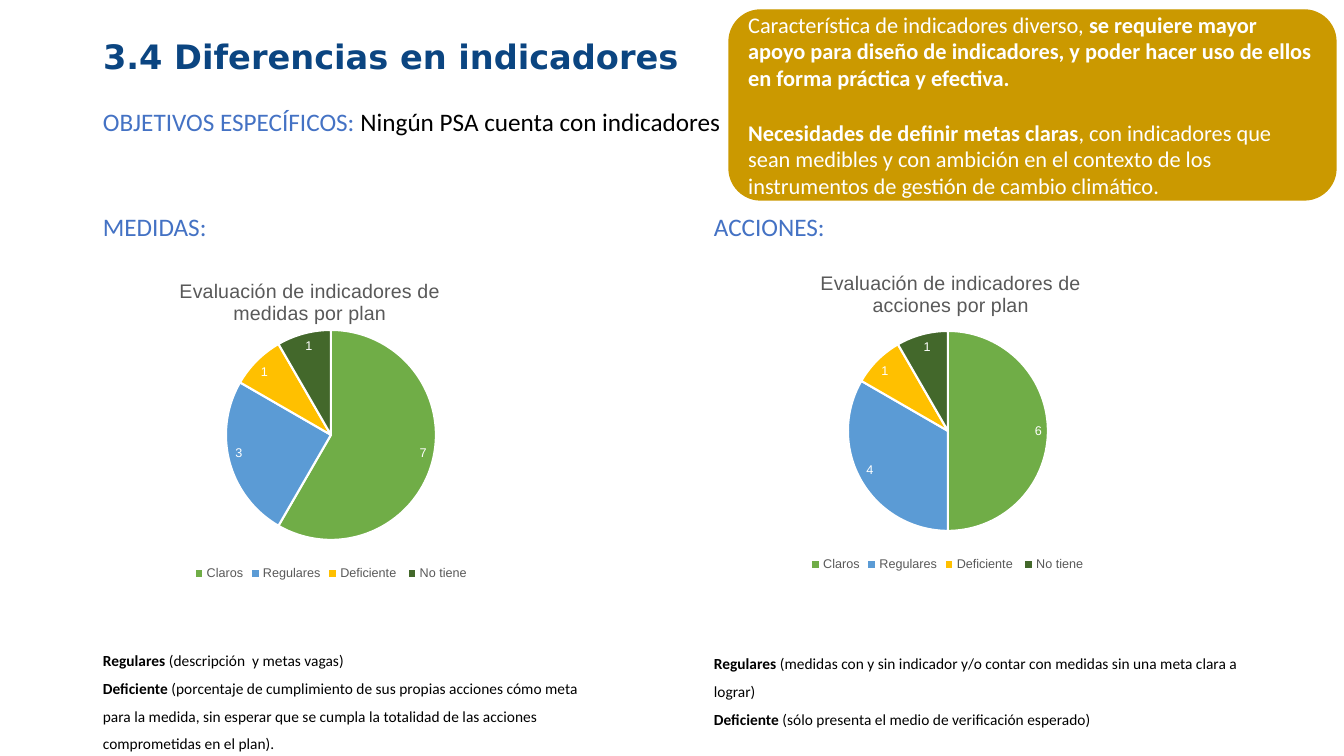
from dataclasses import dataclass

from lxml import etree
from pptx import Presentation
from pptx.chart.data import CategoryChartData
from pptx.dml.color import RGBColor
from pptx.enum.chart import XL_CHART_TYPE, XL_LABEL_POSITION, XL_LEGEND_POSITION
from pptx.enum.shapes import MSO_SHAPE
from pptx.enum.text import MSO_ANCHOR, MSO_AUTO_SIZE, PP_ALIGN
from pptx.oxml.ns import qn
from pptx.util import Pt

PIE = XL_CHART_TYPE.PIE
INSIDE_END = XL_LABEL_POSITION.INSIDE_END
BOTTOM = XL_LEGEND_POSITION.BOTTOM
ROUNDED = MSO_SHAPE.ROUNDED_RECTANGLE
TOP, MIDDLE = MSO_ANCHOR.TOP, MSO_ANCHOR.MIDDLE
NO_AUTOFIT = MSO_AUTO_SIZE.NONE
LEFT = PP_ALIGN.LEFT

EMU_PER_PX = 914400 / 100.8
SLIDE_W, SLIDE_H = 1344, 756


@dataclass(frozen=True)
class Theme:
    title_font: str = "DejaVu Sans"
    body_font: str = "Calibri"
    chart_font: str = "Arial"
    navy: str = "0B4581"
    blue: str = "4472C4"
    gold: str = "CB9900"
    black: str = "000000"
    white: str = "FFFFFF"
    gray: str = "595959"
    slices: tuple = ("70AD47", "5B9BD5", "FFC000", "43682B")
    title_size: int = 24
    heading_size: int = 18
    callout_size: int = 16
    chart_title_size: int = 14
    note_size: int = 11
    label_size: int = 9


THEME = Theme()
CATEGORIES = ("Claros", "Regulares", "Deficiente ", "No tiene")


def px(*lengths):
    return [round(length * EMU_PER_PX) for length in lengths]


def style(font, size, color, name=THEME.body_font, bold=False):
    font.size = Pt(size)
    font.name = name
    font.bold = bold
    font.color.rgb = RGBColor.from_string(color)


def write(frame, paragraphs, size, name=THEME.body_font, spacing=1.0, gap=0):
    """Fill a frame with paragraphs made of (text, color, bold) pieces."""
    frame.word_wrap = True
    frame.auto_size = NO_AUTOFIT
    for index, pieces in enumerate(paragraphs):
        paragraph = frame.paragraphs[0] if index == 0 else frame.add_paragraph()
        paragraph.alignment = LEFT
        paragraph.line_spacing = spacing
        paragraph.space_before = Pt(gap if index else 0)
        for text, color, bold in pieces:
            run = paragraph.add_run()
            run.text = text
            style(run.font, size, color, name, bold)


def add_text(slide, box, paragraphs, size, spacing=1.0):
    frame = slide.shapes.add_textbox(*px(*box)).text_frame
    write(frame, paragraphs, size, spacing=spacing)


def add_title(slide, box):
    title = slide.shapes.title
    title.left, title.top, title.width, title.height = px(*box)
    title.text_frame.vertical_anchor = TOP
    write(title.text_frame, [[("3.4 Diferencias en indicadores", THEME.navy, True)]],
          THEME.title_size, THEME.title_font, spacing=0.9)


def add_objectives(slide, box):
    add_text(slide, box, [[("OBJETIVOS ESPECÍFICOS: ", THEME.blue, False),
                           ("Ningún PSA cuenta con indicadores", THEME.black, False)]],
             THEME.heading_size)


def add_callout(slide, box):
    callout = slide.shapes.add_shape(ROUNDED, *px(*box))
    callout.shadow.inherit = False
    callout.fill.solid()
    callout.fill.fore_color.rgb = RGBColor.from_string(THEME.gold)
    callout.line.color.rgb = RGBColor.from_string(THEME.gold)
    callout.line.width = Pt(1)
    callout.text_frame.vertical_anchor = MIDDLE
    write(callout.text_frame, [
        [("Característica de indicadores diverso, ", THEME.white, False),
         ("se requiere mayor apoyo para diseño de indicadores, y poder hacer uso "
          "de ellos en forma práctica y efectiva.", THEME.white, True)],
        [("Necesidades de definir metas claras", THEME.white, True),
         (", con indicadores que sean medibles y con ambición en el contexto de los "
          "instrumentos de gestión de cambio climático.", THEME.white, False)],
    ], THEME.callout_size, gap=19.5)


def place(element, index, inner=False, **fractions):
    """Give a chart part a manual layout in fractions of the chart."""
    for old in element.findall(qn("c:layout")):
        element.remove(old)
    layout = etree.Element(qn("c:layout"))
    manual = etree.SubElement(layout, qn("c:manualLayout"))
    if inner:
        etree.SubElement(manual, qn("c:layoutTarget")).set("val", "inner")
    for axis in "xy":
        etree.SubElement(manual, qn(f"c:{axis}Mode")).set("val", "edge")
    for key, value in fractions.items():
        etree.SubElement(manual, qn(f"c:{key}")).set("val", f"{value:.4f}")
    element.insert(index, layout)


def add_pie(slide, box, heading, values, heading_at, pie_at, diameter):
    """Place a pie; heading_at and pie_at are offsets from the chart's corner."""
    width, height = box[2:]
    data = CategoryChartData()
    data.categories = CATEGORIES
    data.add_series("Series 1", values)
    chart = slide.shapes.add_chart(PIE, *px(*box), data).chart
    style(chart.font, THEME.label_size, THEME.gray, THEME.chart_font)

    chart.has_title = True
    title = chart.chart_title
    title.text_frame.text = heading
    style(title.text_frame.paragraphs[0].runs[0].font,
          THEME.chart_title_size, THEME.gray, THEME.chart_font)
    place(title._element, 1, x=heading_at[0] / width, y=heading_at[1] / height)

    chart.has_legend = True
    chart.legend.position = BOTTOM
    chart.legend.include_in_layout = False
    style(chart.legend.font, THEME.label_size, THEME.gray, THEME.chart_font)

    plot = chart.plots[0]
    plot.vary_by_categories = True
    place(plot._element.getparent(), 0, inner=True,
          x=pie_at[0] / width, y=pie_at[1] / height,
          w=diameter / width, h=diameter / height)
    for index, color in enumerate(THEME.slices):
        wedge = plot.series[0].points[index].format
        wedge.fill.solid()
        wedge.fill.fore_color.rgb = RGBColor.from_string(color)
        wedge.line.color.rgb = RGBColor.from_string(THEME.white)
        wedge.line.width = Pt(1.5)
    plot.has_data_labels = True
    labels = plot.data_labels
    labels.show_value = True
    labels.show_percentage = False
    labels.position = INSIDE_END
    style(labels.font, THEME.label_size, THEME.white, THEME.chart_font)


def add_column(slide, box, heading, notes_top, notes, pie):
    left, top, width, height = box
    add_text(slide, (left, top, width, 56), [[(heading, THEME.blue, False)]],
             THEME.heading_size, spacing=1.5)
    add_pie(slide, **pie)
    definitions = [[(term, THEME.black, True), (meaning, THEME.black, False)]
                   for term, meaning in notes]
    add_text(slide, (left, notes_top, width, top + height - notes_top),
             definitions, THEME.note_size, spacing=1.5)


def main():
    deck = Presentation()
    deck.slide_width, deck.slide_height = px(SLIDE_W, SLIDE_H)
    slide = deck.slides.add_slide(deck.slide_layouts[5])
    add_title(slide, (93, 35, 1159, 91))
    add_column(
        slide, (93, 191, 516, 565), "MEDIDAS:", 637,
        [("Regulares", " (descripción  y metas vagas)"),
         ("Deficiente", " (porcentaje de cumplimiento de sus propias acciones cómo meta "
          "para la medida, sin esperar que se cumpla la totalidad de las acciones "
          "comprometidas en el plan).")],
        dict(box=(118, 249, 426, 336), values=(7, 3, 1, 1),
             heading="Evaluación de indicadores de medidas por plan",
             heading_at=(58, 26), pie_at=(108, 81), diameter=210))
    add_column(
        slide, (704, 191, 547, 547), "ACCIONES:", 640,
        [("Regulares ", "(medidas con y sin indicador y/o contar con medidas sin una "
          "meta clara a lograr)"),
         ("Deficiente", " (sólo presenta el medio de verificación esperado)")],
        dict(box=(748, 249, 399, 327), values=(6, 4, 1, 1),
             heading="Evaluación de indicadores de acciones por plan",
             heading_at=(69, 18), pie_at=(100, 82), diameter=200))
    add_objectives(slide, (93, 101, 918, 72))
    add_callout(slide, (729, 10, 607, 190))
    deck.save("out.pptx")


if __name__ == "__main__":
    main()
